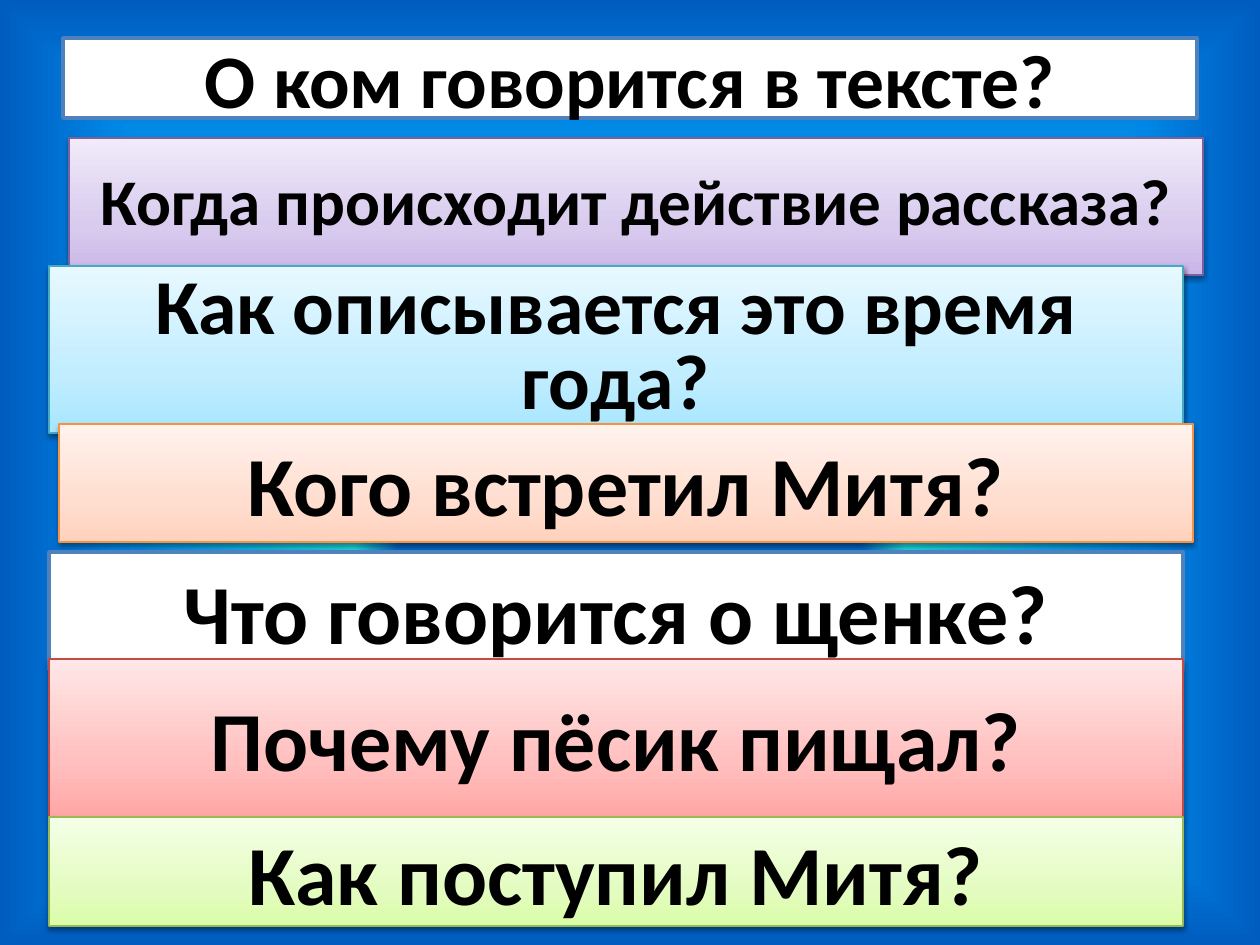
import pptx
import pptx.dml.color
import pptx.enum.shapes
import pptx.enum.text
import pptx.oxml.ns
import pptx.util
from lxml import etree

PX = 914400 / 126
COLORS = {
    "text": "000000", "white": "FFFFFF", "blue": "4F81BD", "shadow": "000000",
    "purple": "7D60A0", "aqua": "46AAC5", "orange": "F69240",
    "red": "BF4C48", "green": "98B955",
}
GRADIENTS = {
    "purple": ["C9B5E8", "D8CBEE", "F0EAF9"],
    "aqua": ["A7E6FF", "C1EDFF", "E7F8FF"],
    "orange": ["FFD2BD", "FFDED0", "FFF2ED"],
    "red": ["FFA6A5", "FFC0BF", "FFE7E7"],
    "green": ["DAFDA7", "E4FCC2", "F5FFE7"],
    "background": ["03D4A8", "005CBF", "21D6E0", "0087E6", "005CBF"],
}
QUESTIONS = [
    ("О ком говорится в тексте?", (63, 38, 1134, 80), "blue", 43.2, 1),
    ("Когда происходит действие рассказа?", (69, 138, 1134, 137), "purple", 37.2, 0.8),
    ("Как описывается это время года?", (49, 266, 1134, 167), "aqua", 44.4, 0.8),
    ("Кого встретил Митя?", (59, 424, 1134, 118), "orange", 48, 1),
    ("Что говорится о щенке?", (49, 552, 1134, 118), "blue", 48, 1),
    ("Почему пёсик пищал?", (49, 659, 1134, 158), "red", 48, 1),
    ("Как поступил Митя?", (49, 817, 1134, 109), "green", 48, 1),
]


def px(n):
    """Turn a length in px into EMU."""
    return pptx.util.Emu(round(n * PX))


def rgb(name):
    """Look up a named colour."""
    return pptx.dml.color.RGBColor.from_string(COLORS[name])


def add(parent, tag, **attrs):
    """Append a DrawingML child with the given attributes."""
    child = etree.SubElement(parent, pptx.oxml.ns.qn("a:" + tag))
    for key, value in attrs.items():
        child.set(key, str(value))
    return child


def set_gradient(fill, root, name, positions):
    """Give a fill its gradient stops and return the emptied gradient element."""
    fill.gradient()
    grad = next(root.iter(pptx.oxml.ns.qn("a:gradFill")))
    for child in list(grad):
        grad.remove(child)
    stops = add(grad, "gsLst")
    for position, color in zip(positions, GRADIENTS[name]):
        add(add(stops, "gs", pos=position * 1000), "srgbClr", val=color)
    return grad


def paint_background(s):
    """Paint the slide with a gradient that spreads from its centre."""
    grad = set_gradient(s.background.fill, s.element, "background", [0, 15, 25, 75, 100])
    add(add(grad, "path", path="shape"), "fillToRect", l=50000, t=50000, r=50000, b=50000)


def add_shadow(sp):
    """Drop a soft shadow straight down from a shape."""
    effects = sp.element.spPr.find(pptx.oxml.ns.qn("a:effectLst"))
    shadow = add(effects, "outerShdw", blurRad=pptx.util.Pt(3.1), dist=pptx.util.Pt(1.6),
                 dir=5400000, rotWithShape=0)
    add(add(shadow, "srgbClr", val=COLORS["shadow"]), "alpha", val=38000)


def add_question(s, text, box, color, size, spacing):
    """Place one question in a framed bar, white or tinted."""
    sp = s.shapes.add_shape(pptx.enum.shapes.MSO_SHAPE.RECTANGLE, *map(px, box))
    sp.shadow.inherit = False
    sp.line.color.rgb = rgb(color)
    if color in GRADIENTS:
        grad = set_gradient(sp.fill, sp.element.spPr, color, [0, 35, 100])
        add(grad, "lin", ang=16200000, scaled=0)
        sp.line.width = pptx.util.Pt(0.75)
        add_shadow(sp)
    else:
        sp.fill.solid()
        sp.fill.fore_color.rgb = rgb("white")
        sp.line.width = pptx.util.Pt(2)
    tf = sp.text_frame
    tf.text = text
    tf.word_wrap = True
    tf.vertical_anchor = pptx.enum.text.MSO_ANCHOR.MIDDLE
    p = tf.paragraphs[0]
    p.alignment = pptx.enum.text.PP_ALIGN.CENTER
    p.line_spacing = float(spacing)
    r = p.runs[0]
    r.font.name = "Calibri"
    r.font.size = pptx.util.Pt(size)
    r.font.bold = True
    r.font.color.rgb = rgb("text")


def main():
    """Build the slide of questions and save it."""
    prs = pptx.Presentation()
    prs.slide_width, prs.slide_height = px(1260), px(945)
    s = prs.slides.add_slide(prs.slide_layouts[6])
    paint_background(s)
    for question in QUESTIONS:
        add_question(s, *question)
    prs.save("out.pptx")


if __name__ == "__main__":
    main()
